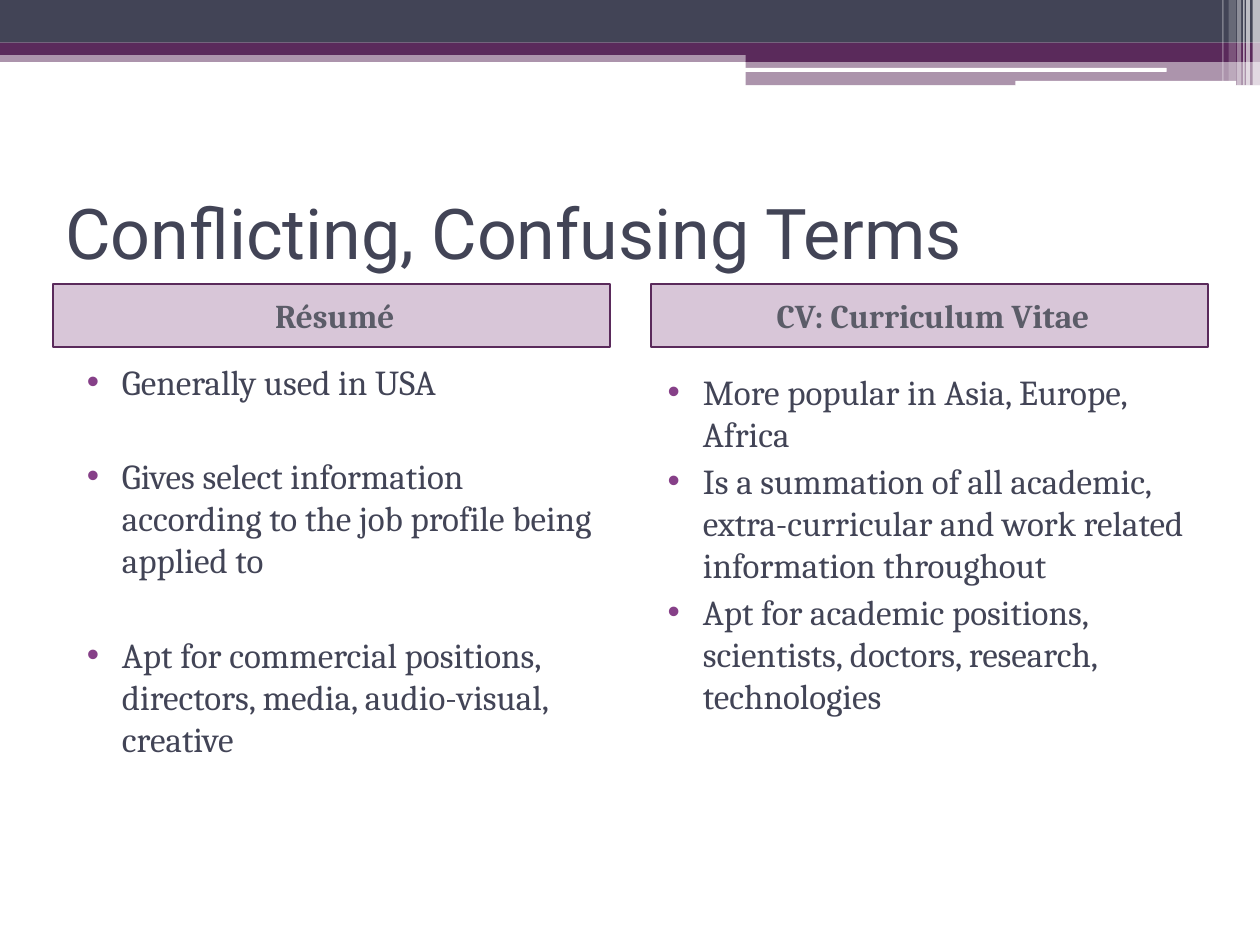
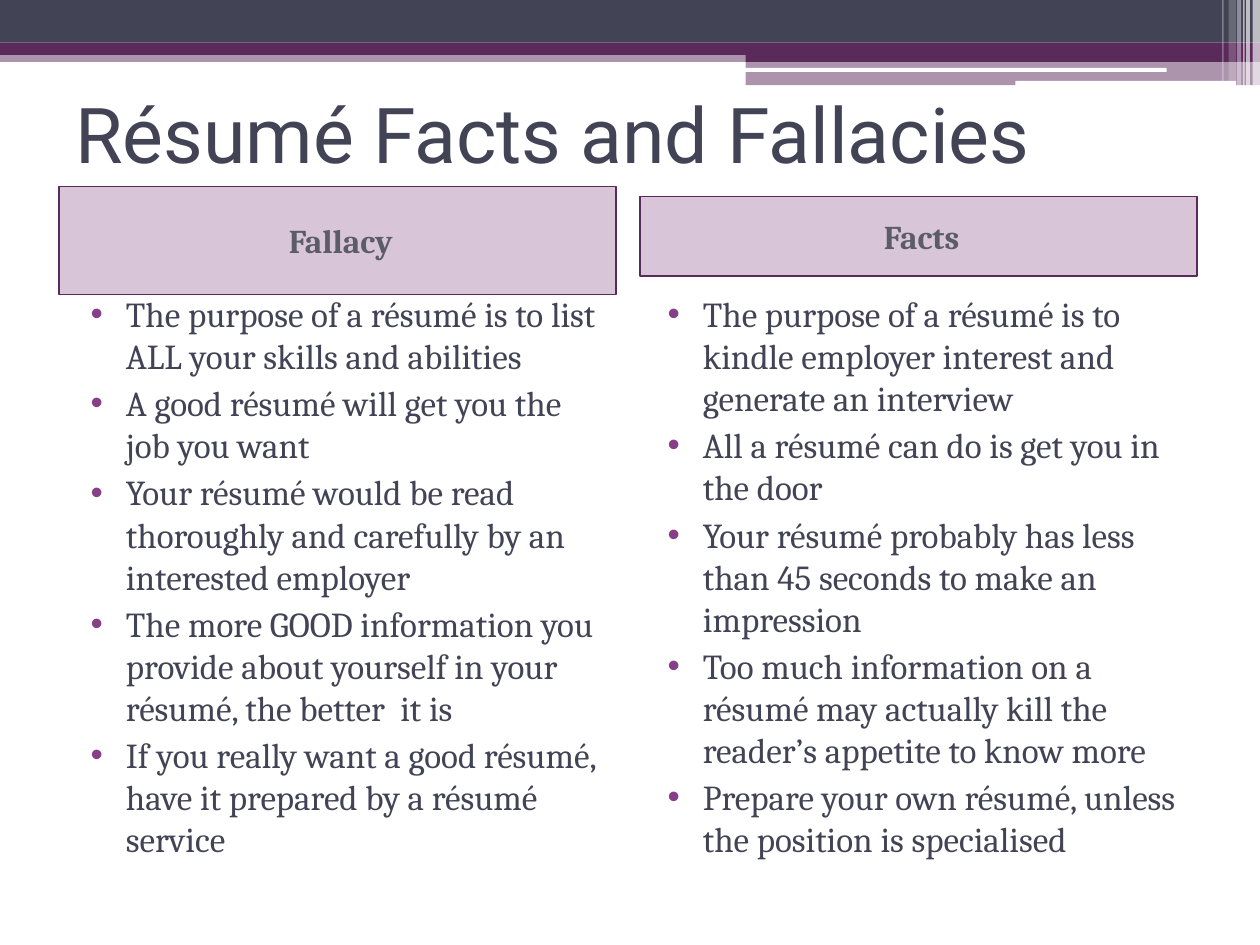
from lxml.etree import SubElement
from pptx import Presentation
from pptx.dml.color import RGBColor
from pptx.enum.shapes import MSO_SHAPE as Shape
from pptx.enum.text import MSO_ANCHOR as Anchor, PP_ALIGN as Align
from pptx.oxml.ns import qn
from pptx.util import Cm, Pt

SLATE, PLUM, WHITE = "424456", "5A2A5B", "FFFFFF"
PANEL, PANEL_TEXT, BULLET = "661E67", "5B5C68", "864088"
TITLE_FONT, BODY_FONT = "Roboto", "Cambria"
SLIDE_WIDTH, SLIDE_HEIGHT, COLUMN_WIDTH = 25.4, 19.05, 11.23
RIBBON_LEFT = 15.03
RIBBON_WIDTH = SLIDE_WIDTH - RIBBON_LEFT

BANDS = [
    (0, 1.02, SLIDE_WIDTH, 0.23, PLUM, 50),
    (0, 0, SLIDE_WIDTH, 0.86, SLATE, 100),
    (0, 0.86, SLIDE_WIDTH, 0.25, PLUM, 100),
    (RIBBON_LEFT, 1, RIBBON_WIDTH, 0.25, PLUM, 100),
    (RIBBON_LEFT, 1.23, RIBBON_WIDTH, 0.49, PLUM, 50),
]
SLITS = [(15.01, 1.37, 8.51, 0.08), (20.47, 1.63, 4.45, 0.1)]
STRIPES = [
    (25.25, 0.15, 1.73, 65),
    (25.12, 0.08, 1.73, 65),
    (25.06, 0.03, 1.73, 60),
    (24.94, 0.08, 1.73, 40),
    (24.77, 0.15, 1.63, 20),
    (24.64, 0.03, 1.63, 30),
]


def paint(target, colour):
    """Give a fill, line or font a solid hex colour."""
    target.fill.solid()
    target.fill.fore_color.rgb = RGBColor.from_string(colour)


class Deck:
    """Hold the shared style and the current slide."""

    def __init__(self):
        """Start an empty deck."""
        self.show = Presentation()
        self.show.slide_width = Cm(SLIDE_WIDTH)
        self.show.slide_height = Cm(SLIDE_HEIGHT)
        self.slide = None

    def new_slide(self):
        """Open a blank slide and draw its top ribbon."""
        self.slide = self.show.slides.add_slide(self.show.slide_layouts[6])
        for *box, colour, opacity in BANDS:
            self.block(box, colour, opacity)
        for box in SLITS:
            self.block(box, WHITE, kind=Shape.ROUNDED_RECTANGLE)
        for left, width, height, opacity in STRIPES:
            self.block((left, 0, width, height), WHITE, opacity)

    def block(self, box, colour, opacity=100, kind=Shape.RECTANGLE):
        """Draw a borderless filled shape."""
        block = self.slide.shapes.add_shape(kind, *map(Cm, box))
        block.shadow.inherit = False
        paint(block, colour)
        block.line.fill.background()
        if opacity < 100:
            solid = block._element.spPr.find(qn("a:solidFill"))
            SubElement(solid[0], qn("a:alpha"), val=str(opacity * 1000))
        return block

    def style(self, paragraph, font_name, size, colour, bold=False):
        """Set the font of a whole paragraph."""
        font = paragraph.font
        font.name, font.size, font.bold = font_name, Pt(size), bold
        paint(font, colour)

    def text_frame(self, box):
        """Add a wrapping text box and return its frame."""
        frame = self.slide.shapes.add_textbox(*map(Cm, box)).text_frame
        frame.word_wrap = True
        return frame

    def title(self, wording, box, size):
        """Add the slide title."""
        frame = self.text_frame(box)
        frame.vertical_anchor = Anchor.MIDDLE
        frame.text = wording
        self.style(frame.paragraphs[0], TITLE_FONT, size, SLATE)

    def heading(self, wording, left, top, height):
        """Add a tinted, outlined column heading."""
        panel = self.block((left, top, COLUMN_WIDTH, height), PANEL, 25)
        paint(panel.line, PLUM)
        panel.line.width = Pt(1)
        frame = panel.text_frame
        frame.vertical_anchor = Anchor.MIDDLE
        frame.text = wording
        paragraph = frame.paragraphs[0]
        paragraph.alignment = Align.CENTER
        paragraph.space_before = Pt(3)
        paragraph._p.get_or_add_pPr().set("marL", str(Cm(0.13)))
        self.style(paragraph, BODY_FONT, 19, PANEL_TEXT, bold=True)

    def bullets(self, points, left, top, height, gap=3):
        """Add a bulleted column with a gap in points between items."""
        frame = self.text_frame((left, top, COLUMN_WIDTH, height))
        frame.text = "\n".join(points)
        for index, paragraph in enumerate(frame.paragraphs):
            paragraph.space_before = Pt(gap if index else 3)
            props = paragraph._p.get_or_add_pPr()
            props.set("marL", str(Cm(1.02)))
            props.set("indent", str(-Cm(0.71)))
            tint = SubElement(props, qn("a:buClr"))
            SubElement(tint, qn("a:srgbClr"), val=BULLET)
            SubElement(props, qn("a:buFont"), typeface="Arial")
            SubElement(props, qn("a:buChar"), char="•")
            self.style(paragraph, BODY_FONT, 20, SLATE)


def add_terms(deck):
    """Compare the two document types."""
    deck.new_slide()
    deck.title("Conflicting, Confusing Terms", (1.07, 3.18, 23.29, 2.97), 40)
    deck.heading("Résumé", 1.07, 5.72, 1.27)
    deck.heading("CV: Curriculum Vitae", 13.13, 5.72, 1.27)
    deck.bullets([
        "Generally used in USA",
        "Gives select information according to the job profile being applied to",
        "Apt for commercial positions, directors, media, audio-visual, creative",
    ], 1.19, 7.14, 10.69, gap=30)
    deck.bullets([
        "More popular in Asia, Europe, Africa",
        "Is a summation of all academic, extra-curricular and work related "
        "information throughout",
        "Apt for academic positions, scientists, doctors, research, technologies",
    ], 12.9, 7.34, 10.69)


def add_fallacies(deck):
    """Set fallacies against facts."""
    deck.new_slide()
    deck.title("Résumé Facts and Fallacies", (1.27, 1.19, 22.86, 2.97), 44)
    deck.heading("Fallacy", 1.19, 3.76, 2.18)
    deck.heading("Facts", 12.9, 3.96, 1.6)
    deck.bullets([
        "The purpose of a résumé is to list ALL your skills and abilities",
        "A good résumé will get you the job you want",
        "Your résumé would be read thoroughly and carefully by an interested "
        "employer",
        "The more GOOD information you provide about yourself in your résumé, "
        "the better  it is",
        "If you really want a good résumé, have it prepared by a résumé service",
    ], 1.27, 5.77, 12.5)
    deck.bullets([
        "The purpose of a résumé is to kindle employer interest and generate "
        "an interview",
        "All a résumé can do is get you in the door",
        "Your résumé probably has less than 45 seconds to make an impression",
        "Too much information on a résumé may actually kill the reader’s "
        "appetite to know more",
        "Prepare your own résumé, unless the position is specialised",
    ], 12.9, 5.77, 11.91)


def main():
    """Build and save the deck."""
    deck = Deck()
    add_terms(deck)
    add_fallacies(deck)
    deck.show.save("out.pptx")


if __name__ == "__main__":
    main()
